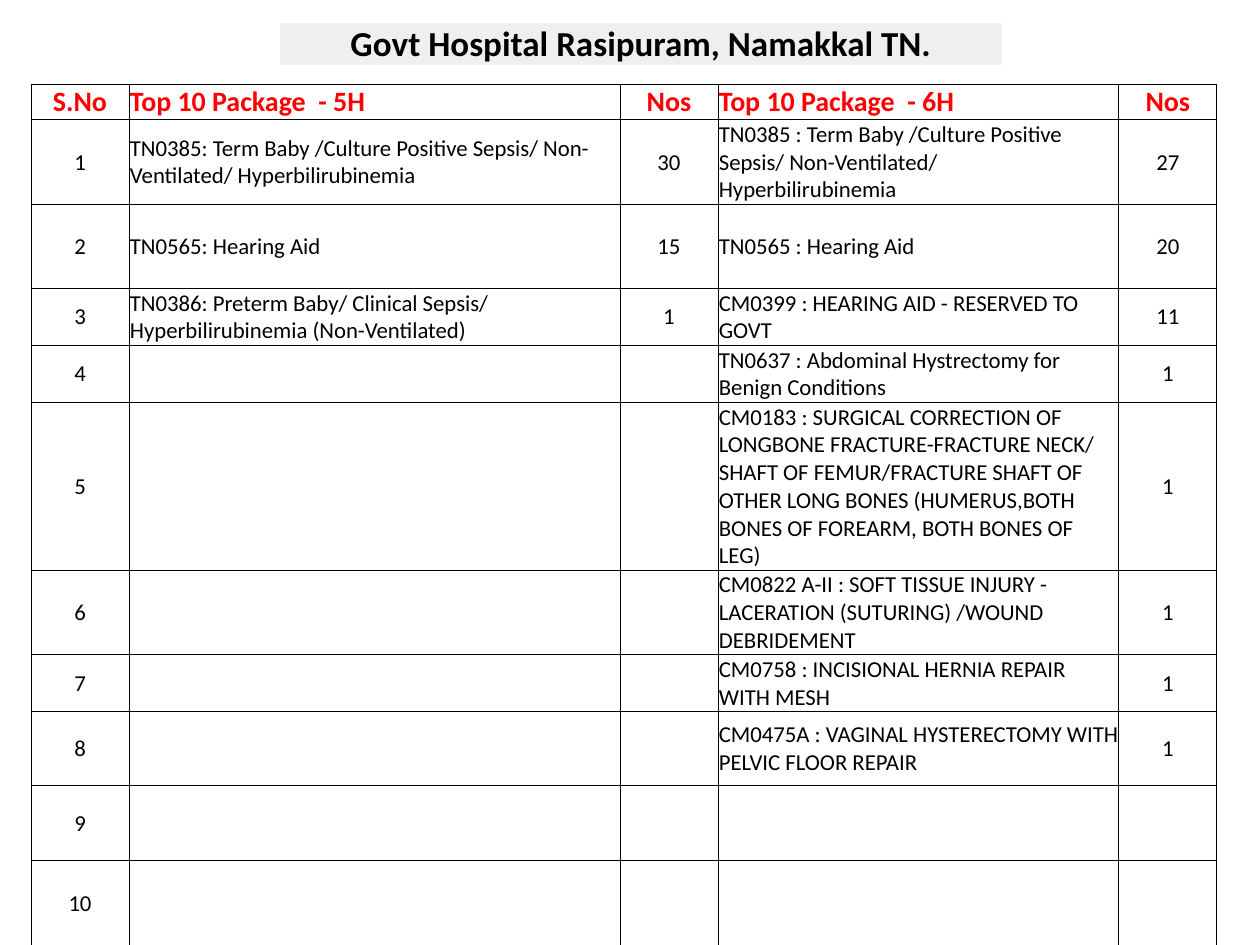
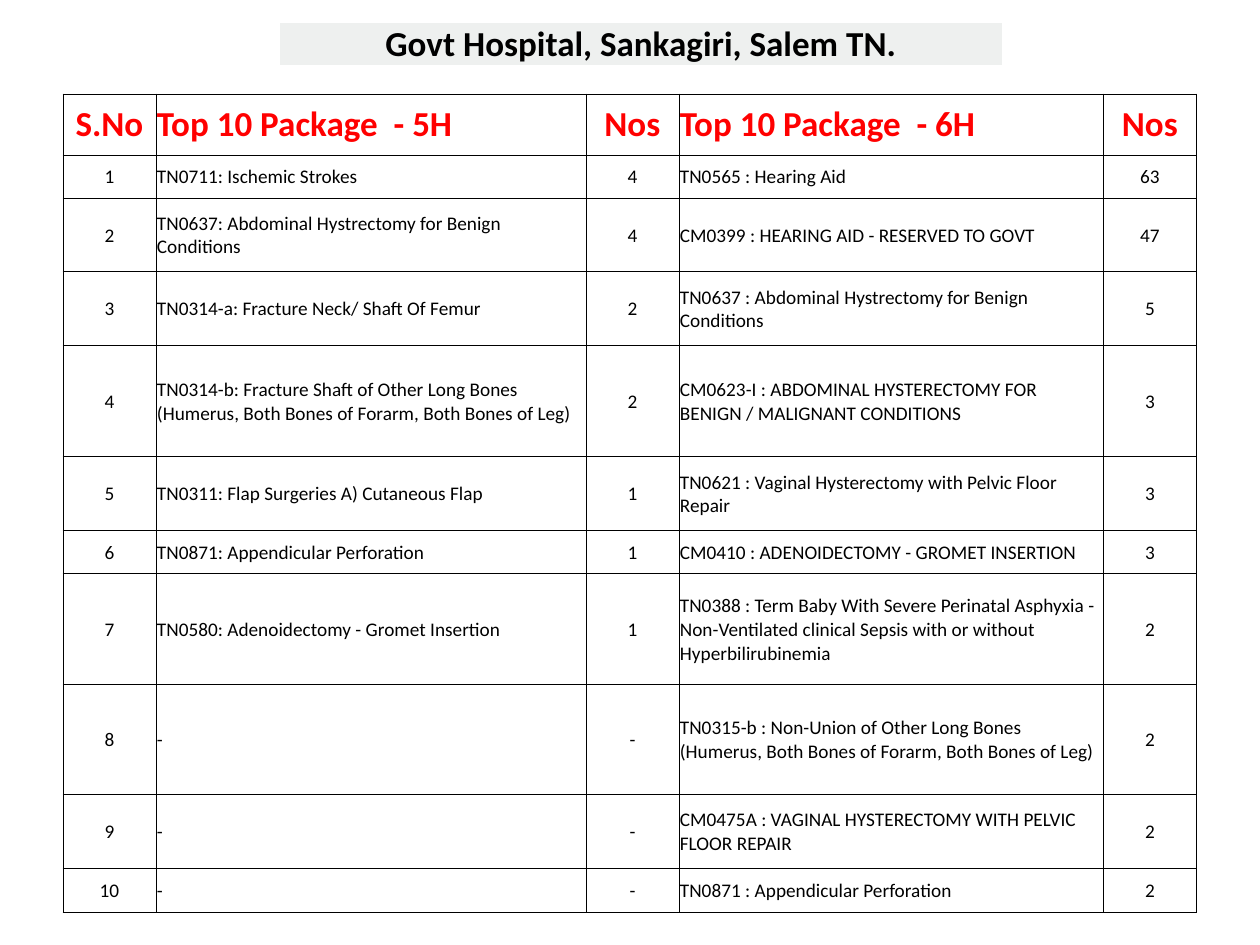
from lxml import etree
from pptx import Presentation
from pptx.dml.color import RGBColor
from pptx.enum import text
from pptx.oxml import ns
from pptx.util import Pt

PX = 914400 // 126
FONT = "Calibri"
BLACK = RGBColor(0x00, 0x00, 0x00)
WHITE = RGBColor(0xFF, 0xFF, 0xFF)
RED = RGBColor(0xFF, 0x00, 0x00)
BAND = RGBColor(0xEE, 0xF0, 0xEF)
CENTER, LEFT = text.PP_ALIGN.CENTER, text.PP_ALIGN.LEFT
MIDDLE, BOTTOM = text.MSO_ANCHOR.MIDDLE, text.MSO_ANCHOR.BOTTOM

HEADER = ["S.No", "Top 10 Package  - 5H", "Nos", "Top 10 Package  - 6H", "Nos"]
ALIGNS = [CENTER, LEFT, CENTER, LEFT, CENTER]

# Each row: 5H package, count, 6H package, count
HOSPITALS = [
    {
        "title": "Govt Hospital Rasipuram, Namakkal TN.",
        "left": 31, "top": 84, "header_size": 16, "body_size": 13,
        "widths": [98, 491, 98, 401, 98],
        "heights": [35, 85, 84, 57, 57, 168, 84, 57, 74, 75, 85],
        "packages": [
            ["TN0385: Term Baby /Culture Positive Sepsis/ Non-Ventilated/ Hyperbilirubinemia", "30",
             "TN0385 : Term Baby /Culture Positive Sepsis/ Non-Ventilated/ Hyperbilirubinemia", "27"],
            ["TN0565: Hearing Aid", "15", "TN0565 : Hearing Aid", "20"],
            ["TN0386: Preterm Baby/ Clinical Sepsis/ Hyperbilirubinemia (Non-Ventilated)", "1",
             "CM0399 : HEARING AID - RESERVED TO GOVT", "11"],
            ["", "", "TN0637 : Abdominal Hystrectomy for Benign Conditions", "1"],
            ["", "", "CM0183 : SURGICAL CORRECTION OF LONGBONE FRACTURE-FRACTURE NECK/ SHAFT OF "
             "FEMUR/FRACTURE SHAFT OF OTHER LONG BONES (HUMERUS,BOTH BONES OF FOREARM, "
             "BOTH BONES OF LEG)", "1"],
            ["", "", "CM0822 A-II : SOFT TISSUE INJURY - LACERATION (SUTURING) /WOUND DEBRIDEMENT", "1"],
            ["", "", "CM0758 : INCISIONAL HERNIA REPAIR WITH MESH", "1"],
            ["", "", "CM0475A : VAGINAL HYSTERECTOMY WITH PELVIC FLOOR REPAIR", "1"],
            ["", "", "", ""],
            ["", "", "", ""],
        ],
    },
    {
        "title": "Govt Hospital, Sankagiri, Salem TN.",
        "left": 63, "top": 94, "header_size": 20, "body_size": 11,
        "widths": [93, 430, 93, 424, 94],
        "heights": [61, 43, 74, 74, 111, 74, 43, 111, 110, 74, 44],
        "packages": [
            ["TN0711: Ischemic Strokes", "4", "TN0565 : Hearing Aid", "63"],
            ["TN0637: Abdominal Hystrectomy for Benign Conditions", "4",
             "CM0399 : HEARING AID - RESERVED TO GOVT", "47"],
            ["TN0314-a: Fracture Neck/ Shaft Of Femur", "2",
             "TN0637 : Abdominal Hystrectomy for Benign Conditions", "5"],
            ["TN0314-b: Fracture Shaft of Other Long Bones (Humerus, Both Bones of Forarm, "
             "Both Bones of Leg)", "2",
             "CM0623-I : ABDOMINAL HYSTERECTOMY FOR BENIGN / MALIGNANT CONDITIONS", "3"],
            ["TN0311: Flap Surgeries A) Cutaneous Flap", "1",
             "TN0621 : Vaginal Hysterectomy with Pelvic Floor Repair", "3"],
            ["TN0871: Appendicular Perforation", "1", "CM0410 : ADENOIDECTOMY - GROMET INSERTION", "3"],
            ["TN0580: Adenoidectomy - Gromet Insertion", "1",
             "TN0388 : Term Baby With Severe Perinatal Asphyxia - Non-Ventilated clinical Sepsis "
             "with or without Hyperbilirubinemia", "2"],
            ["-", "-", "TN0315-b : Non-Union of Other Long Bones (Humerus, Both Bones of Forarm, "
             "Both Bones of Leg)", "2"],
            ["-", "-", "CM0475A : VAGINAL HYSTERECTOMY WITH PELVIC FLOOR REPAIR", "2"],
            ["-", "-", "TN0871 : Appendicular Perforation", "2"],
        ],
    },
]


def add_grid(s, left, top, widths, heights):
    """Add an unbanded table with the given column widths and row heights."""
    frame = s.shapes.add_table(len(heights), len(widths), left * PX, top * PX,
                               sum(widths) * PX, sum(heights) * PX)
    table = frame.table
    table.first_row = table.horz_banding = False
    for column, width in zip(table.columns, widths):
        column.width = width * PX
    for row, height in zip(table.rows, heights):
        row.height = height * PX
    return table


def fill_cell(cell, words, size, color, bold, align, anchor, fill, border, line_width):
    """Give a cell its borders, fill and text."""
    tc_pr = cell._tc.get_or_add_tcPr()
    for side in ("lnL", "lnR", "lnT", "lnB"):
        ln = etree.SubElement(tc_pr, ns.qn(f"a:{side}"), w=str(Pt(line_width)))
        solid = etree.SubElement(ln, ns.qn("a:solidFill"))
        etree.SubElement(solid, ns.qn("a:srgbClr"), val=str(border))
    cell.fill.solid()
    cell.fill.fore_color.rgb = fill
    cell.margin_left = cell.margin_right = cell.margin_top = PX
    cell.margin_bottom = 0
    cell.vertical_anchor = anchor
    p = cell.text_frame.paragraphs[0]
    p.alignment = align
    if words:
        r = p.add_run()
        r.text = words
        r.font.name, r.font.size, r.font.bold = FONT, Pt(size), bold
        r.font.color.rgb = color


prs = Presentation()
prs.slide_width, prs.slide_height = 1260 * PX, 945 * PX

for hospital in HOSPITALS:
    s = prs.slides.add_slide(prs.slide_layouts[6])

    # Title band
    band = add_grid(s, 279, 22, [724], [42])
    fill_cell(band.cell(0, 0), hospital["title"], 20, BLACK, True, CENTER, BOTTOM, BAND, WHITE, 1)

    # Package table
    table = add_grid(s, hospital["left"], hospital["top"], hospital["widths"], hospital["heights"])
    numbered = [[str(n), *row] for n, row in enumerate(hospital["packages"], 1)]
    for i, row in enumerate([HEADER, *numbered]):
        is_header = i == 0
        size = hospital["header_size"] if is_header else hospital["body_size"]
        color = RED if is_header else BLACK
        for j, words in enumerate(row):
            fill_cell(table.cell(i, j), words, size, color, is_header, ALIGNS[j],
                      MIDDLE, WHITE, BLACK, 0.5)

prs.save("out.pptx")
